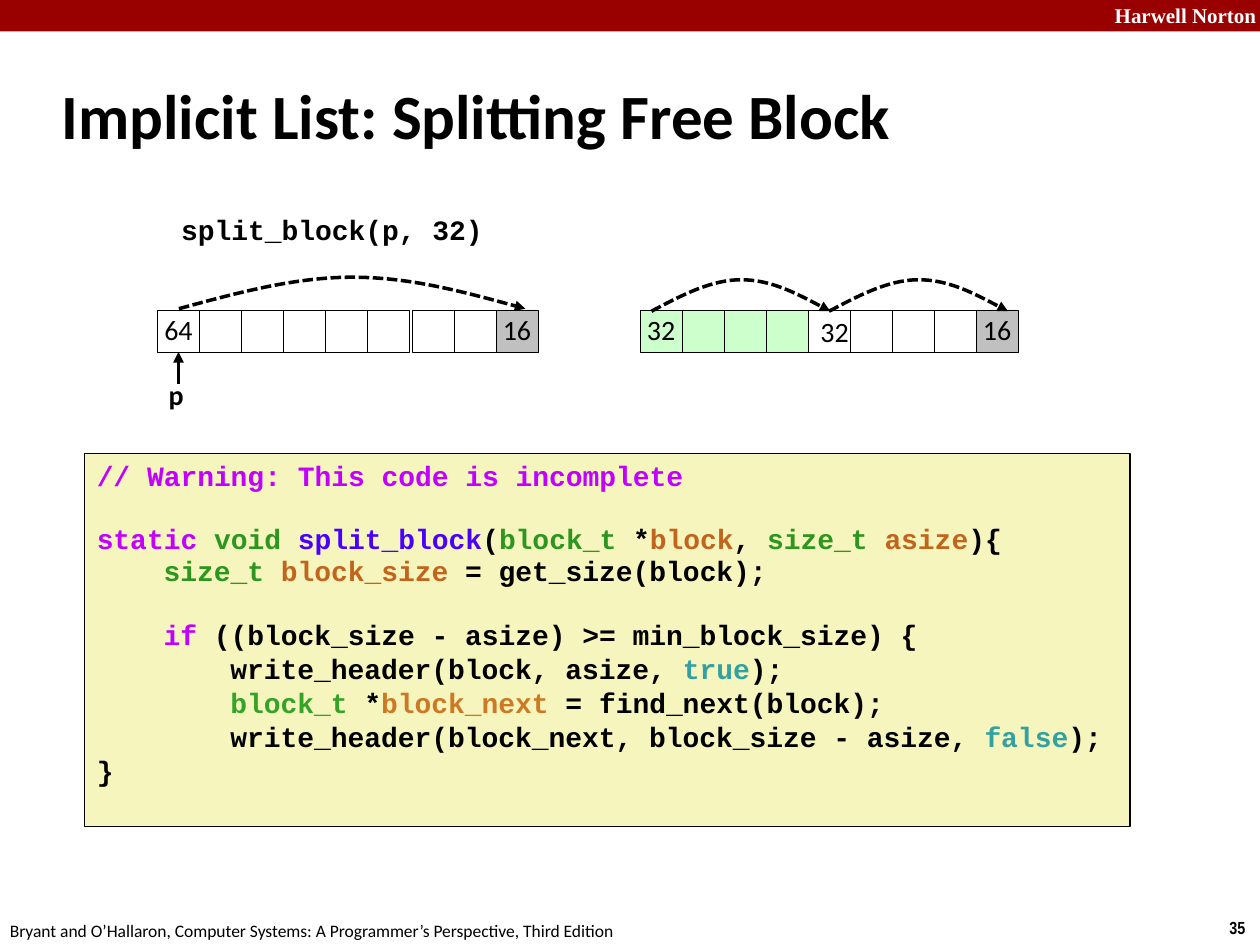
from dataclasses import dataclass

from lxml import etree
from pptx import Presentation
from pptx import util as u
from pptx.dml.color import RGBColor
from pptx.enum import dml, shapes, text
from pptx.oxml.ns import qn


@dataclass(frozen=True)
class Theme:
    black: str = "000000"
    white: str = "FFFFFF"
    band: str = "990000"
    used: str = "CCFFCC"
    footer: str = "C0C0C0"
    paper: str = "F6F5BD"
    sans: str = "Calibri"
    mono: str = "Courier New"
    title_size: int = 36
    body_size: int = 16
    band_size: int = 12
    note_size: int = 10


THEME = Theme()
SYNTAX = {
    "key": "C200FF", "type": "2D961E", "func": "4A00FF", "name": "C1651C",
    "const": "34A1A1", "type2": "34A327", "name2": "CD7923", "": THEME.black,
}
CELL = 1 / 3
ROW_TOP = 2.46
CODE_INDENT = 0.53   # four characters of code
TIGHT, LOOSE = 18.25, 19.4   # code line heights in points

# Each line: indent level, blank line before, line height, (text, syntax) spans
CODE = [
    (0, False, TIGHT, [("// Warning: This code is incomplete", "key")]),
    (0, True, TIGHT, [
        ("static ", "key"), ("void ", "type"), ("split_block", "func"), ("(", ""),
        ("block_t", "type"), (" *", ""), ("block", "name"), (", ", ""),
        ("size_t ", "type"), ("asize", "name"), ("){", "")]),
    (1, False, TIGHT, [("size_t ", "type"), ("block_size", "name"),
                       (" = get_size(block);", "")]),
    (1, True, TIGHT, [("if", "key"), (" ((block_size - asize) >= min_block_size) {", "")]),
    (2, False, LOOSE, [("write_header(block, asize, ", ""), ("true", "const"), (");", "")]),
    (2, False, LOOSE, [("block_t", "type2"), (" *", ""), ("block_next", "name2"),
                       (" = find_next(block);", "")]),
    (2, False, LOOSE, [("write_header(block_next, block_size - asize, ", ""),
                       ("false", "const"), (");", "")]),
    (0, False, LOOSE, [("}", "")]),
]


def rgb(value):
    return RGBColor.from_string(value)


def inches(*lengths):
    return [u.Inches(length) for length in lengths]


def style(paragraph, size, font=THEME.sans, color=THEME.black, bold=False,
          align=text.PP_ALIGN.LEFT, spacing=None):
    paragraph.font.size = u.Pt(size)
    paragraph.font.name = font
    paragraph.font.bold = bold
    paragraph.font.color.rgb = rgb(color)
    paragraph.alignment = align
    if spacing:
        paragraph.line_spacing = spacing


def add_label(page, box, words, size, wrap=False, inset=0.1, **look):
    label = page.shapes.add_textbox(*inches(*box))
    frame = label.text_frame
    frame.word_wrap = wrap
    frame.margin_left = frame.margin_right = u.Inches(inset)
    frame.text = words
    style(frame.paragraphs[0], size, **look)


def add_box(page, box, fill, line=None):
    """Plain rectangle; line is a width in points, or None for no outline."""
    shape = page.shapes.add_shape(shapes.MSO_SHAPE.RECTANGLE, *inches(*box))
    shape.shadow.inherit = False
    shape.fill.solid()
    shape.fill.fore_color.rgb = rgb(fill)
    if line is None:
        shape.line.fill.background()
    else:
        shape.line.color.rgb = rgb(THEME.black)
        shape.line.width = u.Pt(line)
    return shape


def style_arrow(shape):
    shape.line.color.rgb = rgb(THEME.black)
    shape.line.width = u.Pt(2)
    etree.SubElement(shape.line._get_or_add_ln(), qn("a:tailEnd"), type="triangle")


def add_hop(page, left, top, width, height=0.25):
    """Dashed arc from the lower left to the lower right of its box."""
    bottom, middle = top + height, top + height / 2
    heights = [middle, top, top, top, middle, bottom]
    points = [inches(left + width * step / 6, y) for step, y in enumerate(heights, 1)]
    builder = page.shapes.build_freeform(*inches(left, bottom))
    builder.add_line_segments(points, close=False)
    hop = builder.convert_to_shape()
    hop.shadow.inherit = False
    hop.fill.background()
    # Turn each three segments into one Bezier curve
    outline = hop._element.find(".//" + qn("a:path"))
    segments = outline.findall(qn("a:lnTo"))
    for start in (0, 3):
        curve = etree.SubElement(outline, qn("a:cubicBezTo"))
        for segment in segments[start:start + 3]:
            curve.append(segment[0])
            outline.remove(segment)
    hop.line.dash_style = dml.MSO_LINE.SQUARE_DOT
    style_arrow(hop)


def add_cells(page, left, top, cells):
    """Row of touching memory words, given as (value, fill) pairs."""
    row = []
    for index, (value, fill) in enumerate(cells):
        cell = add_box(page, (left + index * CELL, top, CELL, CELL), fill, 0.25)
        if value:
            frame = cell.text_frame
            frame.word_wrap = False
            frame.vertical_anchor = text.MSO_ANCHOR.MIDDLE
            frame.text = value
            style(frame.paragraphs[0], THEME.body_size,
                  align=text.PP_ALIGN.CENTER, spacing=0.98)
        row.append(cell)
    return row


def add_frame(page, width, height):
    # Band with the school name, footer and page number
    add_box(page, (0, 0, width, 0.25), THEME.band)
    add_label(page, (width - 1.36, -0.03, 1.43, 0.3), "Harwell Norton", THEME.band_size,
              wrap=True, font="Times New Roman", color=THEME.white, bold=True,
              align=text.PP_ALIGN.RIGHT)
    add_label(page, (width - 0.34, height - 0.27, 0.34, 0.27), "35", THEME.note_size,
              font="Arial Narrow", bold=True)
    add_label(page, (-0.02, height - 0.25, 5.08, 0.27),
              "Bryant and O’Hallaron, Computer Systems: "
              "A Programmer’s Perspective, Third Edition", THEME.note_size)


def add_title(page, box):
    title = page.shapes.title
    title.left, title.top, title.width, title.height = inches(*box)
    frame = title.text_frame
    frame.text = "Implicit List: Splitting Free Block"
    frame.vertical_anchor = text.MSO_ANCHOR.MIDDLE
    style(frame.paragraphs[0], THEME.title_size, bold=True)


def add_block_before(page, left, top):
    free = ("", THEME.white)
    row = add_cells(page, left, top, [("64", THEME.white)] + [free] * 5)
    add_cells(page, left + 2.02, top, [free] * 2 + [("16", THEME.footer)])
    add_hop(page, left + 0.17, top - 0.26, 2.75)
    # Pointer to the header
    center = left + CELL / 2
    pointer = page.shapes.add_connector(
        shapes.MSO_CONNECTOR.STRAIGHT, *inches(center, top + 0.59, center, top + CELL))
    pointer.end_connect(row[0], 2)
    style_arrow(pointer)
    etree.SubElement(pointer._element.spPr, qn("a:effectLst"))
    add_label(page, (left - 0.01, top + 0.5, 0.32, 0.37), "p", THEME.body_size,
              bold=True, spacing=0.98)
    add_label(page, (left + 0.12, top - 0.78, 2.53, 0.34), "split_block(p, 32)",
              THEME.body_size, inset=0.05, font=THEME.mono, bold=True,
              align=text.PP_ALIGN.CENTER, spacing=0.85)


def add_block_after(page, left, top):
    used, free = ("", THEME.used), ("", THEME.white)
    add_cells(page, left, top, [("32", THEME.used)] + [used] * 3
              + [free] * 4 + [("16", THEME.footer)])
    add_label(page, (left + 4 * CELL, top, 0.43, 0.37), "32", THEME.body_size,
              wrap=True, spacing=0.98)
    for index in range(2):
        add_hop(page, left + 0.09 + index * 1.41, top - 0.24, 1.42)


def add_code(page, box):
    frame = add_box(page, box, THEME.paper, 1).text_frame
    frame.word_wrap = False
    frame.vertical_anchor = text.MSO_ANCHOR.TOP
    for index, (level, gap, pitch, spans) in enumerate(CODE):
        para = frame.add_paragraph() if index else frame.paragraphs[0]
        style(para, THEME.body_size, font=THEME.mono, bold=True, spacing=u.Pt(pitch))
        para.space_before = u.Pt(TIGHT if gap else 0)
        para._p.get_or_add_pPr().set("marL", str(u.Inches(level * CODE_INDENT)))
        for words, kind in spans:
            span = para.add_run()
            span.text = words
            span.font.color.rgb = rgb(SYNTAX[kind])


def main():
    deck = Presentation()
    deck.slide_width, deck.slide_height = inches(10, 7.5)
    page = deck.slides.add_slide(deck.slide_layouts[5])
    add_frame(page, 10, 7.5)
    add_title(page, (0.39, 0.49, 8.3, 0.83))
    add_block_before(page, 1.25, ROW_TOP)
    add_block_after(page, 5.08, ROW_TOP)
    add_code(page, (0.67, 3.6, 8.3, 2.96))
    deck.save("out.pptx")


if __name__ == "__main__":
    main()
